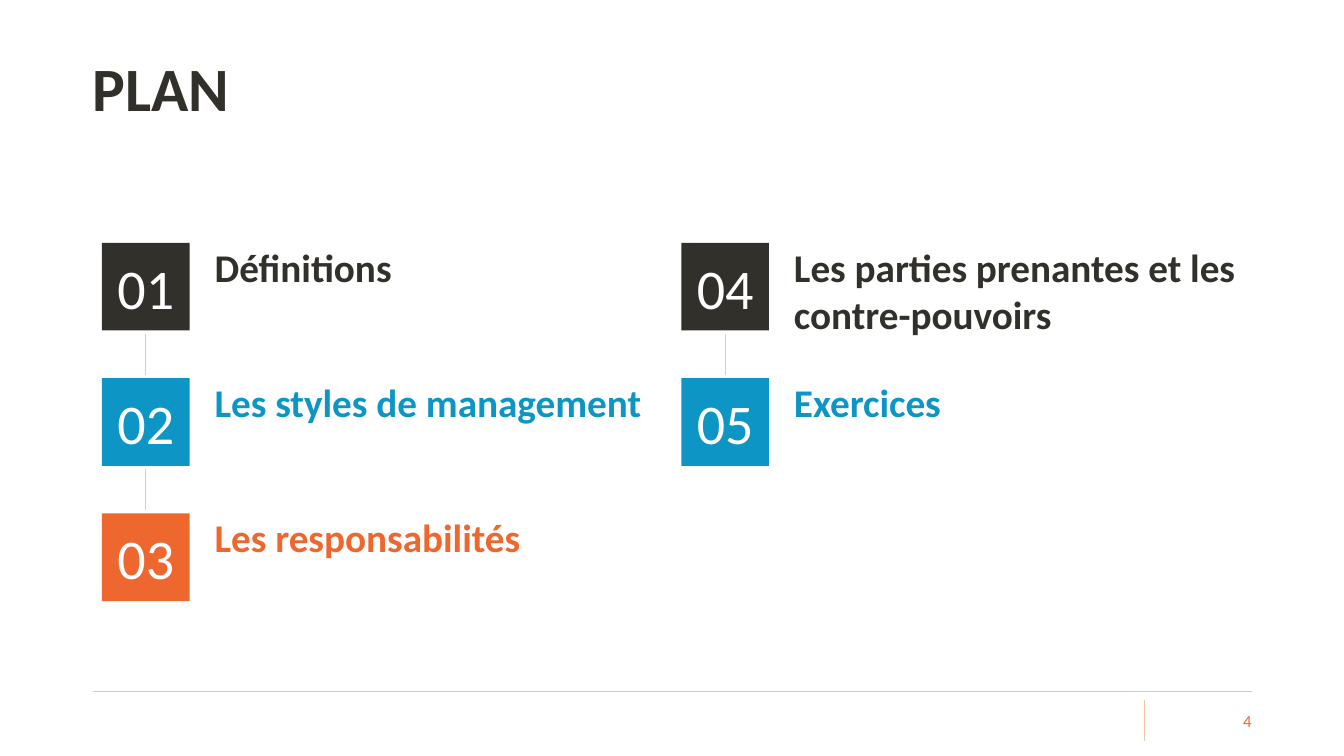
from dataclasses import dataclass

from lxml import etree
from pptx import Presentation
from pptx.dml.color import RGBColor
from pptx.enum.shapes import MSO_CONNECTOR, MSO_SHAPE
from pptx.enum.text import MSO_ANCHOR, MSO_AUTO_SIZE, PP_ALIGN
from pptx.oxml.ns import qn
from pptx.slide import Slide
from pptx.text.text import TextFrame
from pptx.util import Cm, Pt

STRAIGHT = MSO_CONNECTOR.STRAIGHT
RECTANGLE = MSO_SHAPE.RECTANGLE
MIDDLE, TOP = MSO_ANCHOR.MIDDLE, MSO_ANCHOR.TOP
LEFT, CENTER, RIGHT = PP_ALIGN.LEFT, PP_ALIGN.CENTER, PP_ALIGN.RIGHT
GROW = MSO_AUTO_SIZE.SHAPE_TO_FIT_TEXT
NO_AUTOFIT = MSO_AUTO_SIZE.NONE

DARK = RGBColor(0x31, 0x30, 0x2B)
BLUE = RGBColor(0x0D, 0x96, 0xC5)
ORANGE = RGBColor(0xEE, 0x67, 0x2F)
WHITE = RGBColor(0xFF, 0xFF, 0xFF)
FOOTER_GREY = RGBColor(0xCE, 0xCD, 0xC7)
LINK_GREY = RGBColor(0xD0, 0xCE, 0xCE)
PALE_ORANGE = RGBColor(0xF8, 0xC2, 0xAC)
ROW_COLORS = (DARK, BLUE, ORANGE)
FONT = "Calibri"

# Agenda grid, in centimetres
GRID_LEFT, GRID_TOP = 2.57, 6.12
COLUMN_PITCH, ROW_PITCH = 14.6, 3.41
BOX_SIZE = 2.21
LABEL_OFFSET, LABEL_WIDTH, LABEL_LINE_HEIGHT = 2.59, 11.71, 1.19
LINK_GAP = 0.09


@dataclass(frozen=True)
class AgendaItem:
    number: int
    label: str
    column: int
    row: int
    lines: int = 1


AGENDA = (
    AgendaItem(1, "Définitions", 0, 0),
    AgendaItem(2, "Les styles de management", 0, 1),
    AgendaItem(3, "Les responsabilités", 0, 2),
    AgendaItem(4, "Les parties prenantes et les contre-pouvoirs", 1, 0, 2),
    AgendaItem(5, "Exercices", 1, 1),
)


def write_text(frame: TextFrame, text: str, size: float, color: RGBColor,
               bold: bool = False, alignment: PP_ALIGN = LEFT,
               anchor: MSO_ANCHOR = MIDDLE) -> None:
    frame.word_wrap = True
    frame.vertical_anchor = anchor
    paragraph = frame.paragraphs[0]
    paragraph.text = text
    paragraph.alignment = alignment
    font = paragraph.font
    font.name, font.size, font.bold = FONT, Pt(size), bold
    font.color.rgb = color


def set_margins(frame: TextFrame, left: float, right: float, vertical: float) -> None:
    frame.margin_left, frame.margin_right = Cm(left), Cm(right)
    frame.margin_top = frame.margin_bottom = Cm(vertical)


def add_line(slide: Slide, x1: float, y1: float, x2: float, y2: float,
             color: RGBColor) -> None:
    line = slide.shapes.add_connector(STRAIGHT, Cm(x1), Cm(y1), Cm(x2), Cm(y2))
    line.line.color.rgb = color
    line.line.width = Pt(0.5)
    etree.SubElement(line._element.spPr, qn("a:effectLst"))


def add_agenda_item(slide: Slide, item: AgendaItem) -> None:
    left = GRID_LEFT + item.column * COLUMN_PITCH
    top = GRID_TOP + item.row * ROW_PITCH
    color = ROW_COLORS[item.row]

    label = slide.shapes.add_textbox(Cm(left + LABEL_OFFSET), Cm(top), Cm(LABEL_WIDTH),
                                     Cm(item.lines * LABEL_LINE_HEIGHT))
    set_margins(label.text_frame, 0.25, 0.25, 0)
    write_text(label.text_frame, item.label, 28, color, bold=True, anchor=TOP)
    label.text_frame.auto_size = GROW

    box = slide.shapes.add_shape(RECTANGLE, Cm(left), Cm(top), Cm(BOX_SIZE), Cm(BOX_SIZE))
    box.shadow.inherit = False
    box.fill.solid()
    box.fill.fore_color.rgb = color
    box.line.fill.background()
    write_text(box.text_frame, f"{item.number:02d}", 40, WHITE, alignment=CENTER)

    # Link to the box above
    if item.row > 0:
        center = left + BOX_SIZE / 2
        add_line(slide, center, top - ROW_PITCH + BOX_SIZE + LINK_GAP,
                 center, top - LINK_GAP, LINK_GREY)


def add_title(slide: Slide) -> None:
    title = slide.shapes.title
    title.left, title.top, title.width, title.height = Cm(2.34), Cm(0.46), Cm(26.59), Cm(3.68)
    set_margins(title.text_frame, 0, 0.25, 0.13)
    write_text(title.text_frame, "PLAN", 44, DARK, bold=True)
    title.text_frame.auto_size = NO_AUTOFIT
    title.text_frame.paragraphs[0].line_spacing = 0.9


def add_footer(slide: Slide) -> None:
    add_line(slide, 2.34, 17.42, 31.55, 17.42, FOOTER_GREY)
    add_line(slide, 28.83, 17.65, 28.83, 18.67, PALE_ORANGE)
    page = slide.shapes.add_textbox(Cm(29.13), Cm(17.65), Cm(2.41), Cm(1.02))
    set_margins(page.text_frame, 0, 0, 0.13)
    write_text(page.text_frame, "4", 12, ORANGE, alignment=RIGHT)


def main() -> None:
    presentation = Presentation()
    presentation.slide_width, presentation.slide_height = Cm(33.87), Cm(19.05)
    slide = presentation.slides.add_slide(presentation.slide_layouts.get_by_name("Title Only"))
    add_title(slide)
    add_footer(slide)
    for item in AGENDA:
        add_agenda_item(slide, item)
    presentation.save("out.pptx")


if __name__ == "__main__":
    main()
